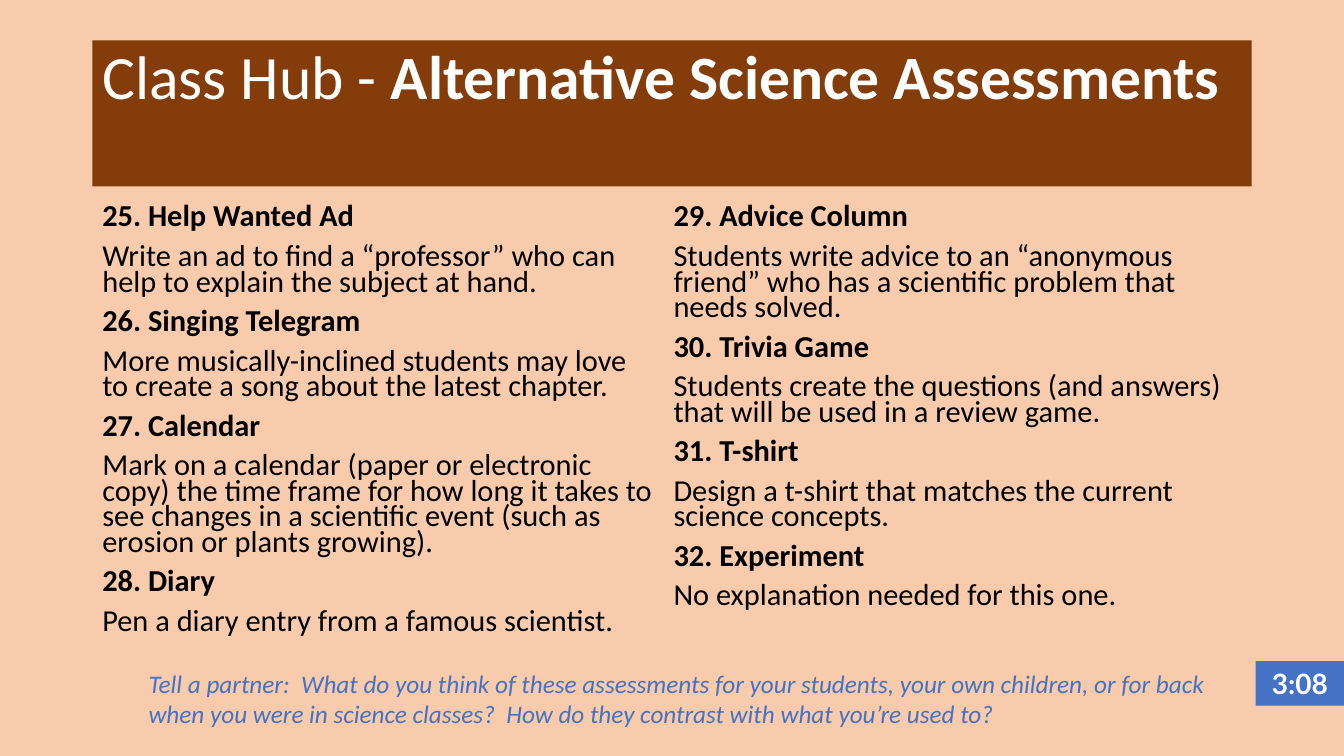
from pptx import Presentation
from pptx.dml.color import RGBColor
from pptx.enum.shapes import MSO_SHAPE
from pptx.enum.text import MSO_ANCHOR, PP_ALIGN
from pptx.util import Inches, Pt

PEACH = RGBColor(0xF8, 0xCB, 0xAD)
BROWN = RGBColor(0x84, 0x3C, 0x0B)
BLUE = RGBColor(0x44, 0x72, 0xC4)
WHITE = RGBColor(0xFF, 0xFF, 0xFF)
BLACK = RGBColor(0, 0, 0)

COLUMNS, ROWS = 160, 90
CELL = Inches(13.333) / COLUMNS
MARGIN = 11
COLUMN_WIDTH = 68
BODY_TOP = 24

IDEAS = [
    [
        ("25. Help Wanted Ad",
         "Write an ad to find a “professor” who can help to explain the subject at hand."),
        ("26. Singing Telegram",
         "More musically-inclined students may love to create a song about the latest chapter."),
        ("27. Calendar",
         "Mark on a calendar (paper or electronic copy) the time frame for how long it takes "
         "to see changes in a scientific event (such as erosion or plants growing)."),
        ("28. Diary", "Pen a diary entry from a famous scientist."),
    ],
    [
        ("29. Advice Column",
         "Students write advice to an “anonymous friend” who has a scientific problem that "
         "needs solved."),
        ("30. Trivia Game",
         "Students create the questions (and answers) that will be used in a review game."),
        ("31. T-shirt", "Design a t-shirt that matches the current science concepts."),
        ("32. Experiment", "No explanation needed for this one."),
    ],
]
PROMPT = ("Tell a partner:  What do you think of these assessments for your students, "
          "your own children, or for back when you were in science classes?  "
          "How do they contrast with what you’re used to?")


def grid(*cells):
    return [round(c * CELL) for c in cells]


def add_run(p, text, size, color, bold=False, italic=False, font="Calibri"):
    r = p.add_run()
    r.text = text
    r.font.name = font
    r.font.size = Pt(size)
    r.font.color.rgb = color
    r.font.bold = bold
    r.font.italic = italic


def add_text(s, *cells):
    tf = s.shapes.add_textbox(*grid(*cells)).text_frame
    tf.word_wrap = True
    return tf


def add_box(s, fill, *cells):
    sp = s.shapes.add_shape(MSO_SHAPE.RECTANGLE, *grid(*cells))
    sp.shadow.inherit = False
    sp.fill.solid()
    sp.fill.fore_color.rgb = fill
    sp.line.fill.background()
    tf = sp.text_frame
    tf.word_wrap = True
    tf.vertical_anchor = MSO_ANCHOR.MIDDLE
    return tf


def add_title(s):
    tf = add_box(s, BROWN, MARGIN, 4.8, 138, 17.4)
    tf.margin_bottom = Inches(0.72)
    p = tf.paragraphs[0]
    p.alignment = PP_ALIGN.LEFT
    p.line_spacing = 0.9
    add_run(p, "Class Hub - ", 44, WHITE)
    add_run(p, "Alternative Science Assessments", 44, WHITE, bold=True)


def add_ideas(s, column, ideas):
    tf = add_text(s, MARGIN + column * COLUMN_WIDTH, BODY_TOP, COLUMN_WIDTH, 54)
    lines = [(text, i == 0) for idea in ideas for i, text in enumerate(idea)]
    for i, (text, bold) in enumerate(lines):
        p = tf.add_paragraph() if i else tf.paragraphs[0]
        p.line_spacing = 0.7
        p.space_before = Pt(10)
        add_run(p, text, 21.7, BLACK, bold=bold)


def add_prompt(s):
    tf = add_text(s, 16.5, 79, 135.4, 8.5)
    add_run(tf.paragraphs[0], PROMPT, 18, BLUE, italic=True)


def add_timer(s):
    tf = add_box(s, BLUE, 149.5, 78.7, 10.5, 5.3)
    p = tf.paragraphs[0]
    p.alignment = PP_ALIGN.CENTER
    add_run(p, "3:08", 20, WHITE, bold=True, font="Lato")


def main():
    prs = Presentation()
    prs.slide_width, prs.slide_height = grid(COLUMNS, ROWS)
    s = prs.slides.add_slide(prs.slide_layouts[6])
    s.background.fill.solid()
    s.background.fill.fore_color.rgb = PEACH
    add_title(s)
    for column, ideas in enumerate(IDEAS):
        add_ideas(s, column, ideas)
    add_prompt(s)
    add_timer(s)
    prs.save("out.pptx")


if __name__ == "__main__":
    main()
